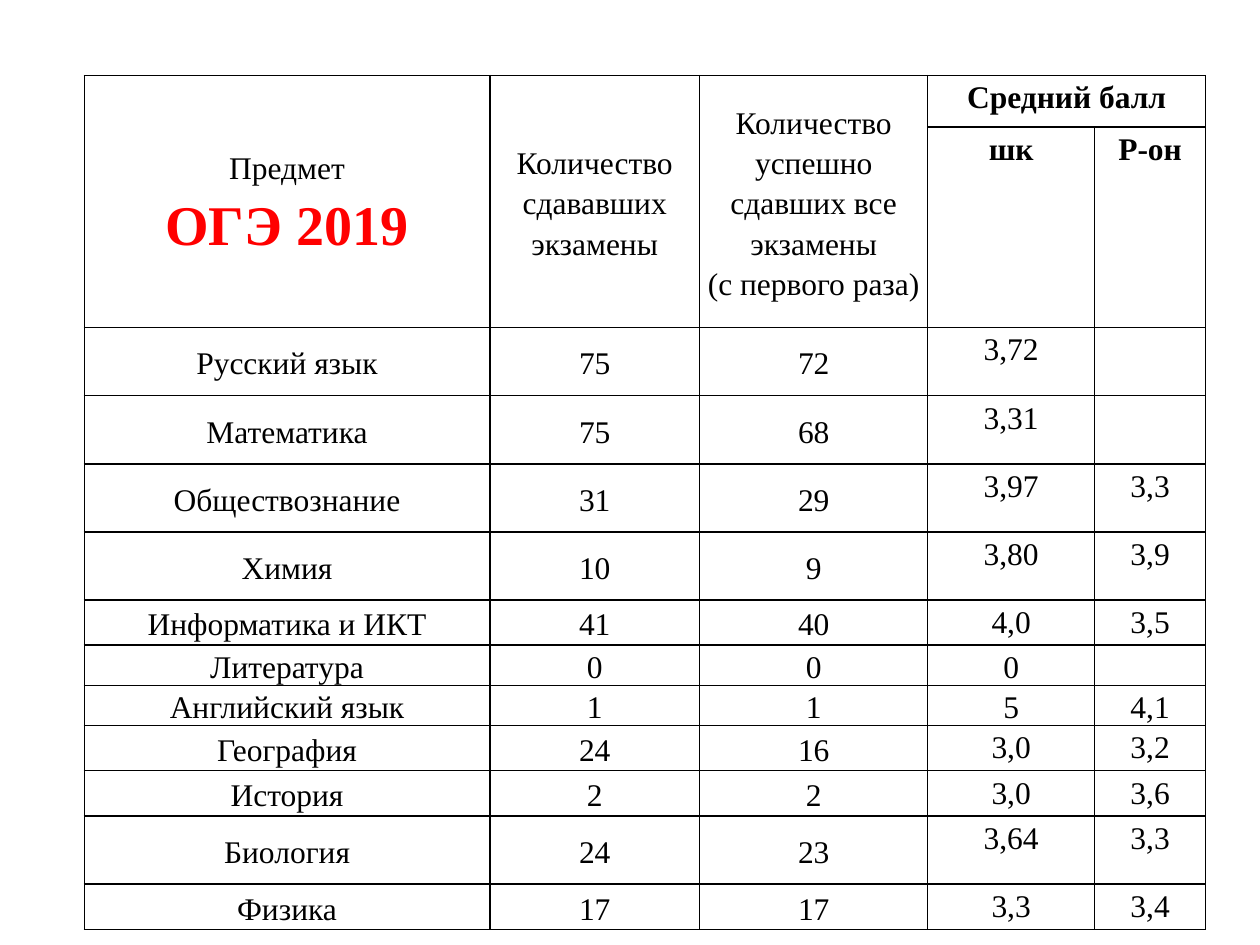
from typing import NamedTuple

from lxml.etree import SubElement
from pptx import Presentation
from pptx.dml.color import RGBColor
from pptx.enum.text import MSO_ANCHOR, PP_ALIGN
from pptx.oxml.ns import qn
from pptx.util import Pt

FONT = "Times New Roman"
BLACK = "000000"
RED = "FF0000"


class Line(NamedTuple):
    text: str
    size: float = 18
    color: str = BLACK
    bold: bool = False


class Header(NamedTuple):
    row: int
    col: int
    lines: list[Line]
    last_row: int
    last_col: int
    anchor: MSO_ANCHOR


class Subject(NamedTuple):
    name: str
    taken: str
    passed: str
    school: str
    district: str
    height: float


TALL, MEDIUM, LOW = 38.9, 25.9, 13
HEADER_HEIGHTS = [29.5, 25.9]
COL_WIDTHS = [231.7, 120, 130.3, 95.4, 63.4]

HEADERS = [
    Header(0, 0, [Line("Предмет"), Line("ОГЭ 2019", 32, RED, True)], 1, 0, MSO_ANCHOR.MIDDLE),
    Header(0, 1, [Line("Количество сдававших экзамены")], 1, 1, MSO_ANCHOR.MIDDLE),
    Header(0, 2, [Line("Количество успешно сдавших все экзамены"),
                  Line("(с первого раза)")], 1, 2, MSO_ANCHOR.MIDDLE),
    Header(0, 3, [Line("Средний балл", bold=True)], 0, 4, MSO_ANCHOR.TOP),
    Header(1, 3, [Line("шк", bold=True)], 1, 3, MSO_ANCHOR.TOP),
    Header(1, 4, [Line("Р-он", bold=True)], 1, 4, MSO_ANCHOR.TOP),
]

SUBJECTS = [
    Subject("Русский язык", "75", "72", "3,72", "", TALL),
    Subject("Математика", "75", "68", "3,31", "", TALL),
    Subject("Обществознание", "31", "29", "3,97", "3,3", TALL),
    Subject("Химия", "10", "9", "3,80", "3,9", TALL),
    Subject("Информатика и ИКТ", "41", "40", "4,0", "3,5", MEDIUM),
    Subject("Литература", "0", "0", "0", "", LOW),
    Subject("Английский язык", "1", "1", "5", "4,1", LOW),
    Subject("География", "24", "16", "3,0", "3,2", MEDIUM),
    Subject("История", "2", "2", "3,0", "3,6", MEDIUM),
    Subject("Биология", "24", "23", "3,64", "3,3", TALL),
    Subject("Физика", "17", "17", "3,3", "3,4", MEDIUM),
]


def rgb(value: str) -> RGBColor:
    return RGBColor.from_string(value)


def style_cell(cell) -> None:
    """Clear the fill, tighten the margins and draw a thin border on each side."""
    cell.margin_left = cell.margin_right = Pt(2.9)
    cell.margin_top = cell.margin_bottom = Pt(0)
    tc_pr = cell._tc.get_or_add_tcPr()
    for side in ("lnL", "lnR", "lnT", "lnB"):
        ln = SubElement(tc_pr, qn(f"a:{side}"), w=str(Pt(1)))
        fill = SubElement(ln, qn("a:solidFill"))
        SubElement(fill, qn("a:srgbClr"), val=BLACK)
    cell.fill.background()


def write_cell(cell, lines: list[Line], anchor: MSO_ANCHOR) -> None:
    cell.vertical_anchor = anchor
    tf = cell.text_frame
    tf.text = "\n".join(line.text for line in lines)
    for p, line in zip(tf.paragraphs, lines):
        p.alignment = PP_ALIGN.CENTER
        p.line_spacing = 1.15
        for r in p.runs:
            r.font.name = FONT
            r.font.size = Pt(line.size)
            r.font.bold = line.bold
            r.font.color.rgb = rgb(line.color)


def add_results_table(s) -> None:
    heights = HEADER_HEIGHTS + [subject.height for subject in SUBJECTS]
    sp = s.shapes.add_table(len(heights), len(COL_WIDTHS), Pt(48.2), Pt(43.2),
                            Pt(sum(COL_WIDTHS)), Pt(sum(heights)))
    table = sp.table
    table.first_row = table.horz_banding = False
    for col, width in zip(table.columns, COL_WIDTHS):
        col.width = Pt(width)
    for row, height in zip(table.rows, heights):
        row.height = Pt(height)
    sp.height = Pt(472.3)

    for cell in table.iter_cells():
        style_cell(cell)
    for h in HEADERS:
        cell = table.cell(h.row, h.col)
        if (h.last_row, h.last_col) != (h.row, h.col):
            cell.merge(table.cell(h.last_row, h.last_col))
        write_cell(cell, h.lines, h.anchor)
    for i, subject in enumerate(SUBJECTS, len(HEADER_HEIGHTS)):
        for j, text in enumerate(subject[:len(COL_WIDTHS)]):
            if text:
                anchor = MSO_ANCHOR.MIDDLE if j < 3 else MSO_ANCHOR.TOP
                write_cell(table.cell(i, j), [Line(text)], anchor)


def main() -> None:
    prs = Presentation()
    prs.slide_width, prs.slide_height = Pt(720), Pt(540)
    s = prs.slides.add_slide(prs.slide_layouts[6])
    add_results_table(s)
    prs.save("out.pptx")


if __name__ == "__main__":
    main()
